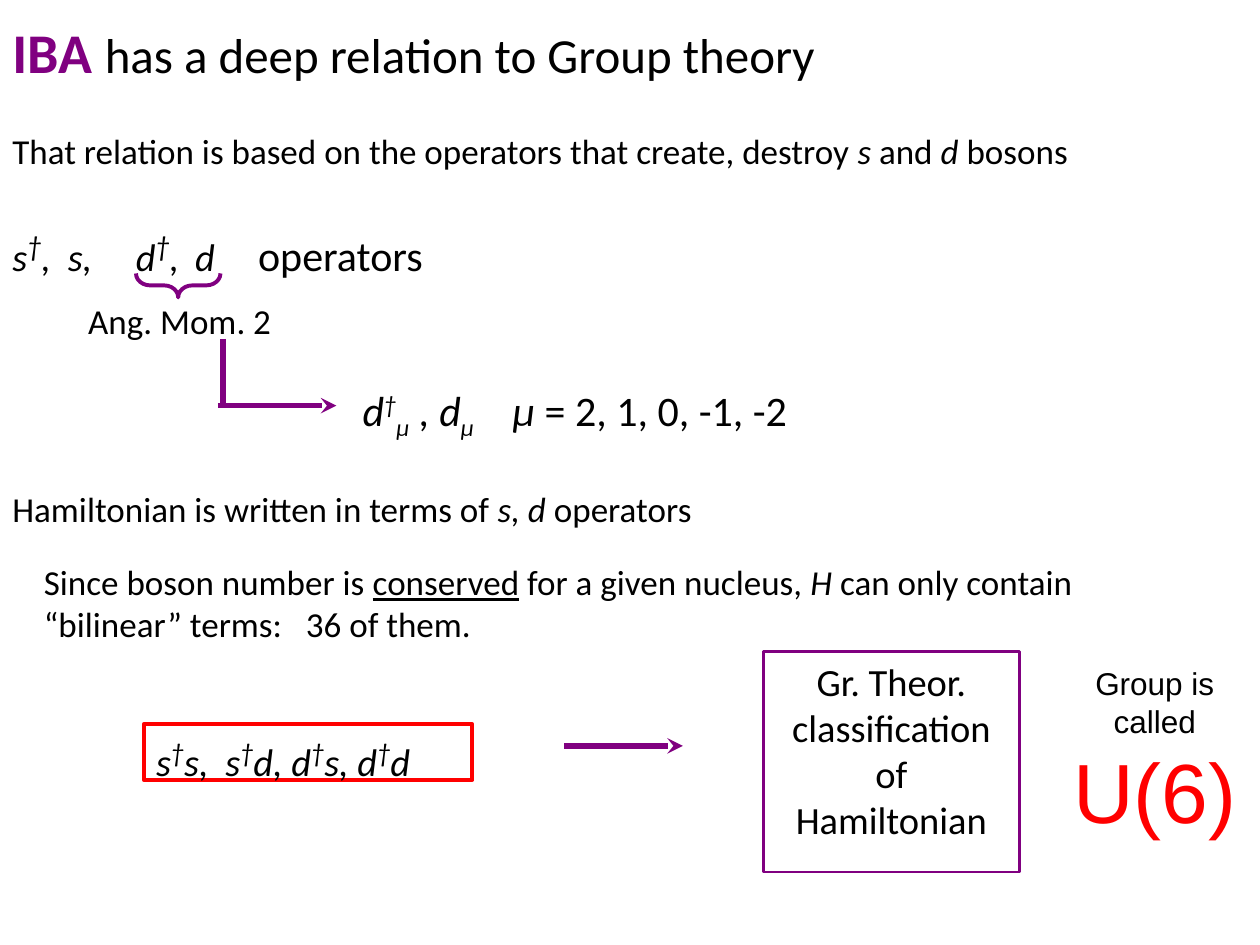
from lxml import etree
from pptx import Presentation
from pptx.dml.color import RGBColor
from pptx.enum.shapes import MSO_CONNECTOR, MSO_SHAPE
from pptx.enum.text import MSO_ANCHOR, PP_ALIGN
from pptx.oxml.ns import qn
from pptx.util import Inches, Pt

STRAIGHT = MSO_CONNECTOR.STRAIGHT
RECTANGLE, LEFT_BRACE = MSO_SHAPE.RECTANGLE, MSO_SHAPE.LEFT_BRACE
TOP, MIDDLE = MSO_ANCHOR.TOP, MSO_ANCHOR.MIDDLE
LEFT, CENTER = PP_ALIGN.LEFT, PP_ALIGN.CENTER

WIDTH, HEIGHT = Inches(10), Inches(7.5)
COLUMN, ROW = WIDTH / 100, HEIGHT / 75
BLACK, PURPLE, RED = "000000", "800080", "FF0000"


def rgb(color):
    return RGBColor.from_string(color)


def grid(column, row):
    return round(column * COLUMN), round(row * ROW)


def box(left, top, width, height):
    return *grid(left, top), *grid(width, height)


def italic(text, size=None):
    return text, {"italic": True, "size": size}


def dagger(size=None):
    return "†", {"italic": True, "size": size, "baseline": 30}


def subscript(text):
    return text, {"italic": True, "baseline": -25}


def add_run(paragraph, text, size=None, color=None, baseline=None, **flags):
    run = paragraph.add_run()
    run.text = text
    if size:
        run.font.size = Pt(size)
    if color:
        run.font.color.rgb = rgb(color)
    for name, value in flags.items():
        setattr(run.font, name, value)
    if baseline:
        run.font._element.set("baseline", str(baseline * 1000))


def add_tab_stops(paragraph, columns):
    properties = paragraph._p.get_or_add_pPr()
    tabs = etree.Element(qn("a:tabLst"))
    for column in columns:
        etree.SubElement(tabs, qn("a:tab"), pos=str(round(column * COLUMN)), algn="l")
    properties.insert_element_before(tabs, "a:defRPr", "a:extLst")


def write(paragraph, parts, size, color=BLACK, font="Calibri", align=LEFT, tabs=()):
    """Fill a paragraph with parts: plain strings or (text, run style) pairs."""
    paragraph.alignment = align
    paragraph.font.name = font
    paragraph.font.size = Pt(size)
    paragraph.font.color.rgb = rgb(color)
    if tabs:
        add_tab_stops(paragraph, tabs)
    for part in parts:
        text, style = (part, {}) if isinstance(part, str) else part
        add_run(paragraph, text, **style)


def add_text(slide, place, parts, size, anchor=MIDDLE, **style):
    frame = slide.shapes.add_textbox(*box(*place)).text_frame
    frame.word_wrap = True
    frame.vertical_anchor = anchor
    write(frame.paragraphs[0], parts, size, **style)
    return frame


def add_outline(slide, kind, place, color, weight):
    shape = slide.shapes.add_shape(kind, *box(*place))
    shape.shadow.inherit = False
    shape.fill.background()
    shape.line.color.rgb = rgb(color)
    shape.line.width = Pt(weight)
    return shape


def add_framed_text(slide, place, color, weight, parts, **style):
    frame = add_outline(slide, RECTANGLE, place, color, weight).text_frame
    frame.word_wrap = True
    frame.vertical_anchor = TOP
    paragraph = frame.paragraphs[0]
    paragraph.space_after = Pt(10)
    write(paragraph, parts, 22, **style)


def add_line(shapes, start, end, arrow=False):
    connector = shapes.add_connector(STRAIGHT, *grid(*start), *grid(*end))
    connector.line.color.rgb = rgb(PURPLE)
    connector.line.width = Pt(3)
    if arrow:
        line = connector.line._get_or_add_ln()
        etree.SubElement(line, qn("a:tailEnd"), type="stealth")
    etree.SubElement(connector._element.spPr, qn("a:effectLst"))


def add_introduction(slide):
    add_text(slide, (0, 0.9, 66, 6.3),
             [("IBA ", {"size": 32, "color": PURPLE, "bold": True}),
              "has a deep relation to Group theory"], 28)
    add_text(slide, (0, 9.8, 100, 4.3),
             ["That relation is based on the operators that create, destroy ",
              italic("s"), " and ", italic("d"), " bosons"], 20)


def add_operators(slide):
    add_text(slide, (0, 17.5, 35.3, 5),
             [italic("s"), dagger(28), italic(",\ts,\td"), dagger(28),
              italic(",\td\t"), ("operators", {"size": 24})],
             22, tabs=(4.4, 9.8, 14.5, 19.5))
    brace = add_outline(slide, LEFT_BRACE, (13.2, 19.3, 1.9, 6.7), PURPLE, 2.25)
    brace.rotation = 270
    brace.adjustments[0] = 0.59
    momentum = add_text(slide, (4.2, 23.3, 26.7, 4.3), ["Ang. Mom. 2"], 20)
    momentum.margin_left = round(2.8 * COLUMN)

    elbow = slide.shapes.add_group_shape().shapes
    add_line(elbow, (17.7, 26.9), (17.7, 32))
    add_line(elbow, (17.3, 32.2), (26.7, 32.2), arrow=True)
    add_text(slide, (27.8, 30, 36.6, 5),
             [italic("d"), dagger(), subscript("μ\t"), italic(", d"),
              subscript("μ\t"), italic("μ"), " = 2, 1, 0, -1, -2"],
             24, anchor=TOP, tabs=(4.5, 11.9))


def add_hamiltonian(slide):
    add_text(slide, (0, 38.2, 56.2, 4.3),
             ["Hamiltonian is written in terms of ", italic("s, d"), " operators"], 20)
    add_text(slide, (2.5, 44, 90, 7.7),
             ["Since boson number is ", ("conserved", {"underline": True}),
              " for a given nucleus, ", italic("H"),
              " can only contain “bilinear” terms:\t36 of them."], 20, tabs=(20.8,))


def add_classification(slide):
    add_framed_text(slide, (11.4, 57.5, 26.1, 4.4), RED, 2.25,
                    [italic("s"), dagger(26), italic("s,\ts"), dagger(26),
                     italic("d, d"), dagger(26), italic("s, d"), dagger(26),
                     italic("d")], tabs=(5.5,))
    add_framed_text(slide, (60.6, 51.7, 20.3, 17.5), PURPLE, 1.5,
                    ["Gr. Theor. classification of Hamiltonian"], align=CENTER)
    add_line(slide.shapes, (44.8, 59.2), (54.2, 59.2), arrow=True)
    group = add_text(slide, (83.3, 52.2, 16.7, 18), ["Group is called"], 18,
                     anchor=TOP, font="Arial", align=CENTER)
    write(group.add_paragraph(), ["U(6)"], 48, color=RED, font="Arial", align=CENTER)


def main():
    presentation = Presentation()
    presentation.slide_width, presentation.slide_height = WIDTH, HEIGHT
    slide = presentation.slides.add_slide(presentation.slide_layouts[6])
    add_introduction(slide)
    add_operators(slide)
    add_hamiltonian(slide)
    add_classification(slide)
    presentation.save("out.pptx")


if __name__ == "__main__":
    main()
